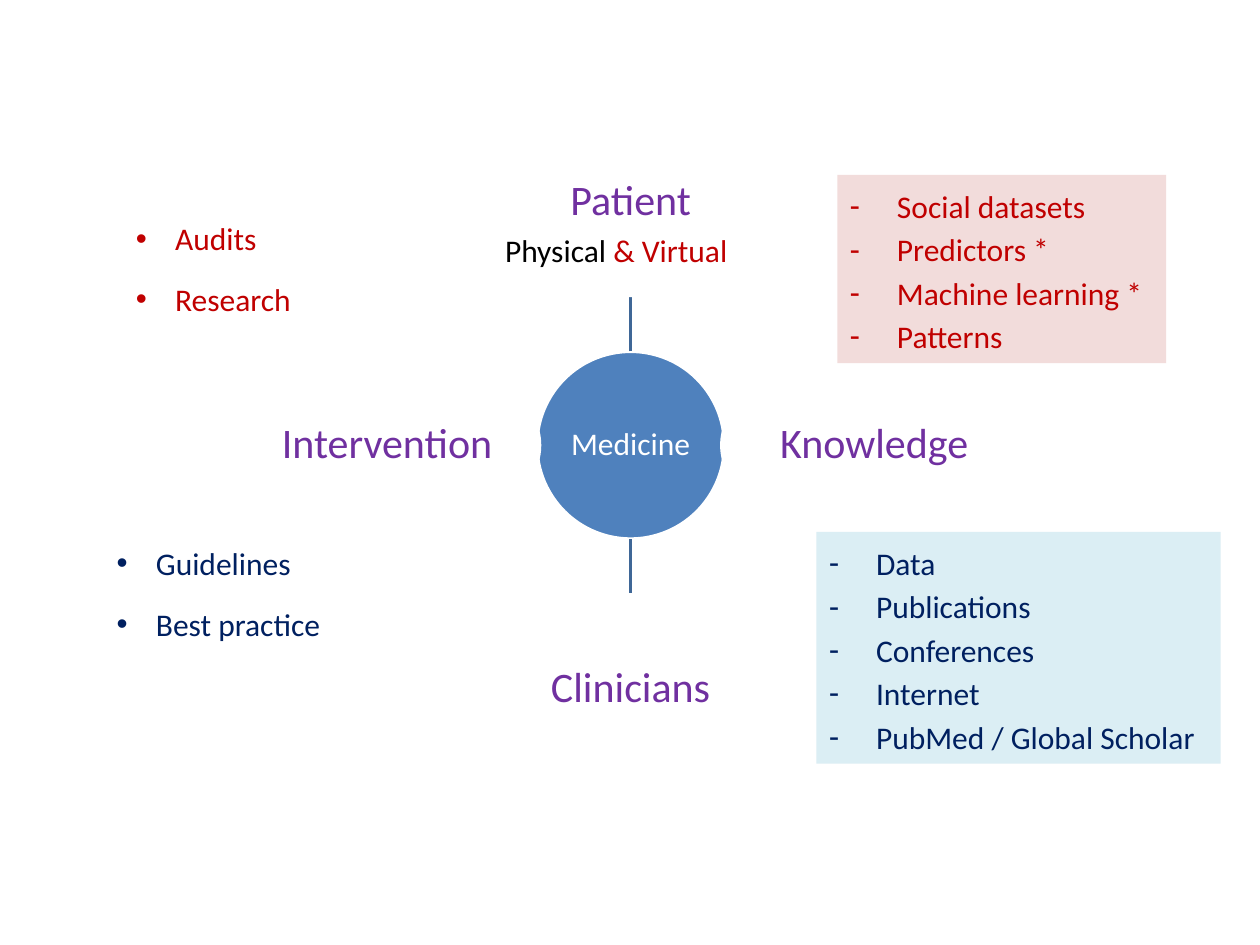
from lxml.etree import SubElement
from pptx import Presentation
from pptx.dml.color import RGBColor
from pptx.enum.shapes import MSO_CONNECTOR, MSO_SHAPE
from pptx.enum.text import MSO_ANCHOR, PP_ALIGN
from pptx.oxml.ns import qn
from pptx.util import Pt

FONT = "Calibri"
COLORS = {
    "white": "FFFFFF", "black": "000000", "hub": "4F81BD", "spoke": "3F6797",
    "purple": "7030A0", "red": "C00000", "navy": "002060",
    "pink": "F2DCDB", "aqua": "DBEEF4",
}

HUB = "Medicine"
# text, horizontal and vertical direction from the hub
NODES = [("Patient", 0, -1), ("Knowledge", 1, 0),
         ("Clinicians", 0, 1), ("Intervention", -1, 0)]
PATIENT_KINDS = [("Physical ", "black"), ("& Virtual", "red")]
# items, box (left, top, width, height), text colour, fill, bullet, indent, space after
LISTS = [
    (["Data", "Publications", "Conferences", "Internet", "PubMed / Global Scholar"],
     (466.5, 304, 231, 132.5), "navy", "aqua", "-", 27, 0),
    (["Social datasets", "Predictors *", "Machine learning *", "Patterns"],
     (478.5, 100, 188, 107.5), "red", "pink", "-", 27, 0),
    (["Guidelines", "Best practice"],
     (59.5, 304, 153.5, 99.5), "navy", None, "•", 22.5, 10),
    (["Audits", "Research"],
     (70.5, 118.5, 104.5, 68), "red", None, "•", 22.5, 10),
]

CENTER_X, CENTER_Y = 360.4, 254.4
HUB_SIZE = 107.3
NODE_W, NODE_H = 174.2, 107.3
DISTANCE = 139.2


def rgb(name):
    return RGBColor.from_string(COLORS[name])


def add_run(p, text, size, color):
    r = p.add_run()
    r.text = text
    r.font.name = FONT
    r.font.size = Pt(size)
    r.font.color.rgb = rgb(color)


def add_circle(slide, text, cx, cy, w, h, fill, size, color, inset):
    sp = slide.shapes.add_shape(MSO_SHAPE.OVAL, Pt(cx - w / 2), Pt(cy - h / 2), Pt(w), Pt(h))
    sp.shadow.inherit = False
    sp.fill.solid()
    sp.fill.fore_color.rgb = rgb(fill)
    sp.line.color.rgb = rgb("white")
    sp.line.width = Pt(2)
    tf = sp.text_frame
    tf.word_wrap = True
    tf.vertical_anchor = MSO_ANCHOR.MIDDLE
    tf.margin_left = tf.margin_right = tf.margin_top = tf.margin_bottom = Pt(inset)
    p = tf.paragraphs[0]
    p.alignment = PP_ALIGN.CENTER
    p.line_spacing = 0.9
    add_run(p, text, size, color)


def add_spoke(slide, dx, dy):
    """Join the hub's edge to the facing edge of the node in that direction."""
    start = HUB_SIZE / 2
    end = DISTANCE - (NODE_W if dx else NODE_H) / 2
    line = slide.shapes.add_connector(
        MSO_CONNECTOR.STRAIGHT,
        Pt(CENTER_X + dx * start), Pt(CENTER_Y + dy * start),
        Pt(CENTER_X + dx * end), Pt(CENTER_Y + dy * end))
    line.line.color.rgb = rgb("spoke")
    line.line.width = Pt(2)
    SubElement(line._element.spPr, qn("a:effectLst"))


def add_text_box(slide, box):
    sp = slide.shapes.add_textbox(*(Pt(v) for v in box))
    sp.text_frame.word_wrap = True
    return sp


def add_list(slide, items, box, color, fill, bullet, indent, space_after):
    sp = add_text_box(slide, box)
    if fill:
        sp.fill.solid()
        sp.fill.fore_color.rgb = rgb(fill)
    tf = sp.text_frame
    for i, item in enumerate(items):
        p = tf.add_paragraph() if i else tf.paragraphs[0]
        p.line_spacing = 1.15
        p.space_after = Pt(space_after)
        pPr = p._p.get_or_add_pPr()
        pPr.set("marL", str(Pt(indent)))
        pPr.set("indent", str(-Pt(indent)))
        SubElement(pPr, qn("a:buFont"), typeface="Arial")
        SubElement(pPr, qn("a:buChar"), char=bullet)
        add_run(p, item, 18, color)


def main():
    prs = Presentation()
    prs.slide_width, prs.slide_height = Pt(720), Pt(540)
    slide = prs.slides.add_slide(prs.slide_layouts[6])

    add_circle(slide, HUB, CENTER_X, CENTER_Y, HUB_SIZE, HUB_SIZE, "hub", 18, "white", 0.9)
    for text, dx, dy in NODES:
        add_spoke(slide, dx, dy)
        add_circle(slide, text, CENTER_X + dx * DISTANCE, CENTER_Y + dy * DISTANCE,
                   NODE_W, NODE_H, "white", 24, "purple", 1.2)

    kinds = add_text_box(slide, (281.5, 128.5, 147.5, 29))
    for text, color in PATIENT_KINDS:
        add_run(kinds.text_frame.paragraphs[0], text, 18, color)

    for entry in LISTS:
        add_list(slide, *entry)

    prs.save("out.pptx")


if __name__ == "__main__":
    main()
